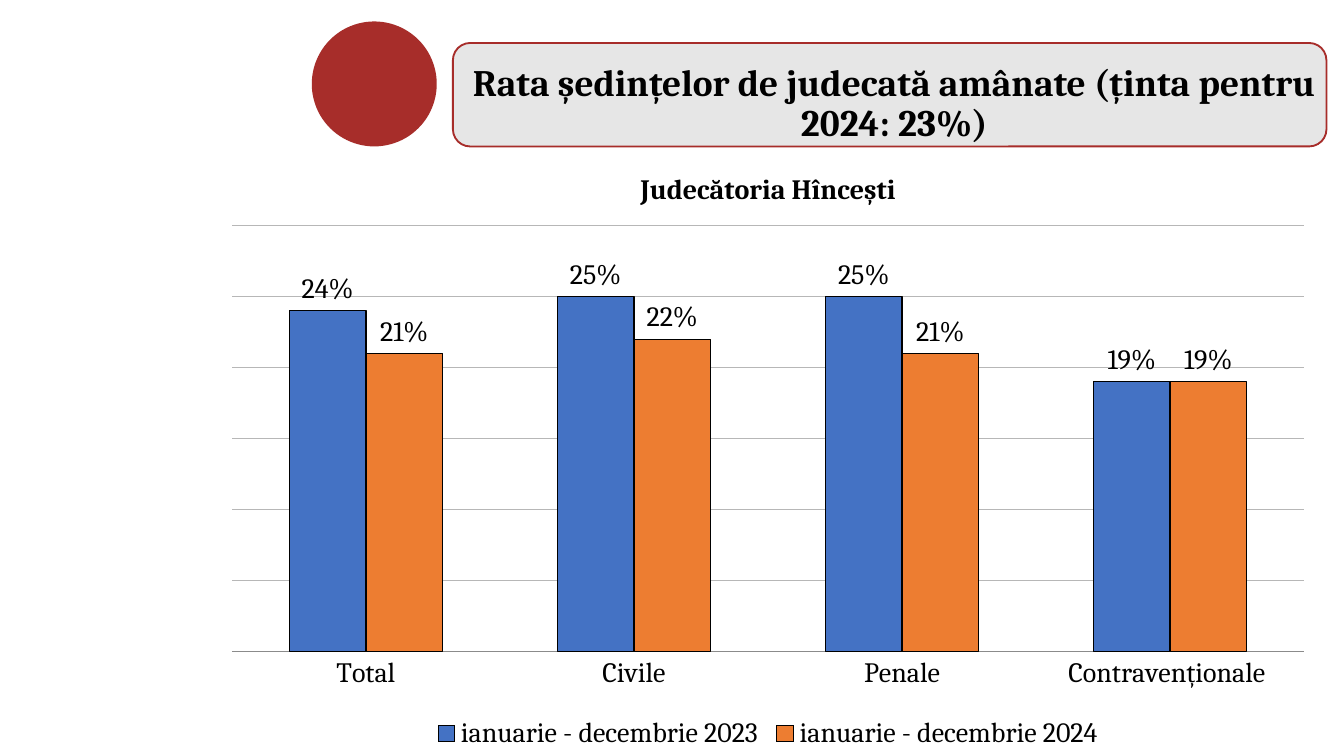
from dataclasses import dataclass

from lxml.etree import SubElement
from pptx import Presentation
from pptx.chart.axis import CategoryAxis, ValueAxis
from pptx.chart.chart import Chart
from pptx.chart.data import CategoryChartData
from pptx.chart.series import BarSeries
from pptx.dml.color import RGBColor
from pptx.enum.chart import (XL_CHART_TYPE, XL_LABEL_POSITION,
                             XL_LEGEND_POSITION, XL_TICK_LABEL_POSITION,
                             XL_TICK_MARK)
from pptx.enum.shapes import MSO_SHAPE
from pptx.enum.text import PP_ALIGN
from pptx.oxml.ns import qn
from pptx.slide import Slide
from pptx.text.text import TextFrame
from pptx.util import Inches, Pt


@dataclass(frozen=True)
class Theme:
    font: str = "Cambria"
    heading_size: float = 20
    chart_size: float = 15
    text: RGBColor = RGBColor(0x00, 0x00, 0x00)
    accent: RGBColor = RGBColor(0xA7, 0x2D, 0x2A)
    panel: RGBColor = RGBColor(0xE6, 0xE6, 0xE6)
    grid: RGBColor = RGBColor(0xB7, 0xB7, 0xB7)
    axis: RGBColor = RGBColor(0x8B, 0x8B, 0x8B)
    blue: RGBColor = RGBColor(0x44, 0x72, 0xC4)
    orange: RGBColor = RGBColor(0xED, 0x7D, 0x31)


@dataclass(frozen=True)
class Box:
    left: float
    top: float
    width: float
    height: float

    def emu(self) -> tuple:
        return tuple(Inches(v) for v in (self.left, self.top, self.width, self.height))


@dataclass(frozen=True)
class Period:
    name: str
    rates: tuple[float, ...]
    color: RGBColor


THEME = Theme()
CASE_TYPES = ("Total", "Civile", "Penale", "Contravenționale ")
PERIODS = (
    Period("ianuarie - decembrie 2023", (0.24, 0.25, 0.25, 0.19), THEME.blue),
    Period("ianuarie - decembrie 2024", (0.21, 0.22, 0.21, 0.19), THEME.orange),
)
# Plot area as fractions of the chart frame
PLOT_AREA = {"x": 0.02, "y": 0.13, "w": 0.96, "h": 0.7}


def write_text(frame: TextFrame, text: str, *, size: float, bold: bool = False,
               align: PP_ALIGN = PP_ALIGN.CENTER, line_spacing: float = 1.0) -> None:
    paragraph = frame.paragraphs[0]
    paragraph.alignment = align
    paragraph.line_spacing = line_spacing
    run = paragraph.add_run()
    run.text = text
    run.font.name = THEME.font
    run.font.size = Pt(size)
    run.font.bold = bold
    run.font.color.rgb = THEME.text


def add_panel(slide: Slide, preset: MSO_SHAPE, box: Box, fill: RGBColor,
              outline: RGBColor | None = None) -> None:
    panel = slide.shapes.add_shape(preset, *box.emu())
    panel.shadow.inherit = False
    panel.fill.solid()
    panel.fill.fore_color.rgb = fill
    if outline is None:
        panel.line.fill.background()
    else:
        panel.line.color.rgb = outline
        panel.line.width = Pt(1)


def add_heading(slide: Slide, box: Box, text: str) -> None:
    frame = slide.shapes.add_textbox(*box.emu()).text_frame
    frame.word_wrap = True
    write_text(frame, text, size=THEME.heading_size, bold=True, line_spacing=0.9)


def fix_plot_area(chart: Chart) -> None:
    """Pin the inner plot area, which python-pptx has no method for."""
    plot_area = chart.plots[0]._element.getparent()
    for old_layout in plot_area.findall(qn("c:layout")):
        plot_area.remove(old_layout)
    layout = SubElement(plot_area, qn("c:layout"))
    plot_area.insert(0, layout)
    manual = SubElement(layout, qn("c:manualLayout"))
    settings = {"layoutTarget": "inner", "xMode": "edge", "yMode": "edge", **PLOT_AREA}
    for tag, value in settings.items():
        SubElement(manual, qn(f"c:{tag}")).set("val", str(value))


def style_axes(categories: CategoryAxis, rates: ValueAxis) -> None:
    categories.major_tick_mark = XL_TICK_MARK.NONE
    categories.minor_tick_mark = XL_TICK_MARK.NONE
    categories.tick_label_position = XL_TICK_LABEL_POSITION.NEXT_TO_AXIS
    categories.format.line.color.rgb = THEME.axis
    categories.format.line.width = Pt(0.75)
    rates.minimum_scale, rates.maximum_scale, rates.major_unit = 0, 0.3, 0.05
    rates.has_major_gridlines = True
    rates.major_gridlines.format.line.color.rgb = THEME.grid
    rates.major_gridlines.format.line.width = Pt(0.75)
    rates.tick_labels.number_format = "0%"
    rates.tick_labels.number_format_is_linked = False
    rates.visible = False


def style_series(series: BarSeries, color: RGBColor) -> None:
    series.format.fill.solid()
    series.format.fill.fore_color.rgb = color
    series.format.line.color.rgb = THEME.text
    series.format.line.width = Pt(0.75)
    labels = series.data_labels
    labels.show_value = True
    labels.number_format = "0%"
    labels.number_format_is_linked = False
    labels.position = XL_LABEL_POSITION.OUTSIDE_END


def add_rate_chart(slide: Slide, box: Box, title: str) -> None:
    data = CategoryChartData(number_format="0%")
    data.categories = CASE_TYPES
    for period in PERIODS:
        data.add_series(period.name, period.rates)
    chart = slide.shapes.add_chart(XL_CHART_TYPE.COLUMN_CLUSTERED, *box.emu(), data).chart
    chart.font.name = THEME.font
    chart.font.size = Pt(THEME.chart_size)
    chart.font.color.rgb = THEME.text
    chart.has_title = True
    write_text(chart.chart_title.text_frame, title, size=THEME.chart_size, bold=True)
    chart.chart_title.include_in_layout = False
    chart.has_legend = True
    chart.legend.position = XL_LEGEND_POSITION.BOTTOM
    chart.legend.include_in_layout = False
    plot = chart.plots[0]
    plot.gap_width = 150
    plot.overlap = 0
    plot.vary_by_categories = False
    for series, period in zip(plot.series, PERIODS):
        style_series(series, period.color)
    style_axes(chart.category_axis, chart.value_axis)
    fix_plot_area(chart)


def main() -> None:
    deck = Presentation()
    deck.slide_width = Inches(10)
    deck.slide_height = deck.slide_width * 9 // 16
    slide = deck.slides.add_slide(deck.slide_layouts[6])
    add_panel(slide, MSO_SHAPE.OVAL, Box(2.32, 0.16, 0.93, 0.93), THEME.accent)
    add_panel(slide, MSO_SHAPE.ROUNDED_RECTANGLE, Box(3.37, 0.32, 6.5, 0.77),
              THEME.panel, THEME.accent)
    add_heading(slide, Box(3.31, 0.43, 6.69, 0.71),
                "Rata ședințelor de judecată amânate (ținta pentru 2024: 23%)")
    add_rate_chart(slide, Box(1.56, 1.09, 8.31, 4.53), "Judecătoria Hîncești")
    deck.save("out.pptx")


if __name__ == "__main__":
    main()
